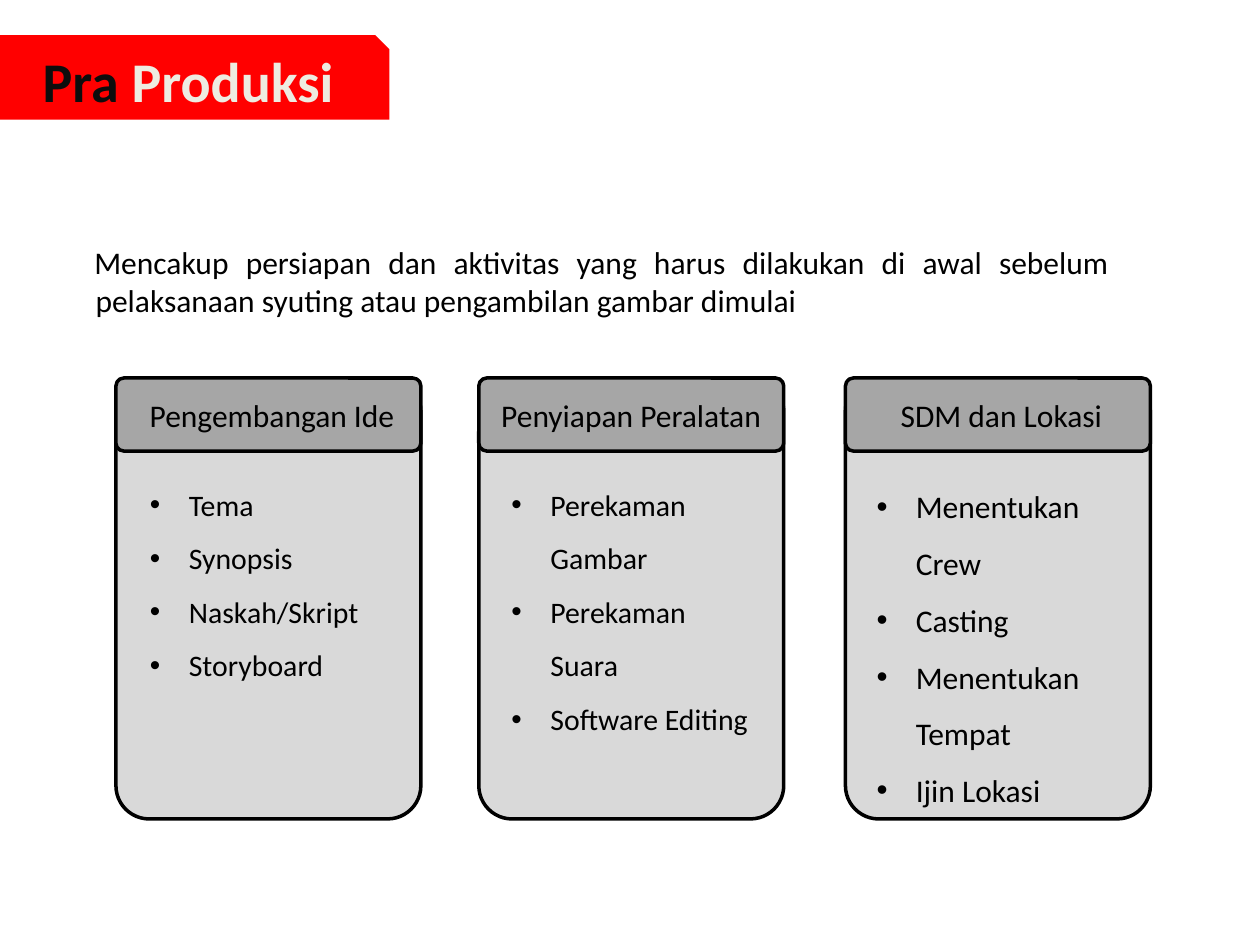
"""Build the "Pra Produksi" slide: a title flag, an introduction and three list cards."""
from lxml import etree
from pptx import Presentation, util as u
from pptx.dml.color import RGBColor
from pptx.enum import shapes, text
from pptx.oxml.ns import qn

COLORS = {"black": "000000", "ink": "0D0D0D", "cream": "EEECE1",
          "red": "FF0000", "card": "D9D9D9", "header": "A6A6A6"}
FONT = "Calibri"
TITLE = [("Pra ", "ink"), ("Produksi", "cream")]
INTRO = ("Mencakup persiapan dan aktivitas yang harus dilakukan di awal sebelum "
         "pelaksanaan syuting atau pengambilan gambar dimulai")
CARDS = [
    {"left": 0.92, "heading": "Pengembangan Ide", "heading_indent": 0.17,
     "list_indent": 0.17, "size": 17, "height": 2.12,
     "items": ["Tema", "Synopsis", "Naskah/Skript", "Storyboard"]},
    {"left": 3.8, "heading": "Penyiapan Peralatan", "heading_indent": 0.08,
     "list_indent": 0.16, "size": 17, "height": 2.98,
     "items": ["Perekaman Gambar", "Perekaman Suara", "Software Editing"]},
    {"left": 6.71, "heading": "SDM dan Lokasi", "heading_indent": 0.34,
     "list_indent": 0.15, "size": 18, "height": 3.13,
     "items": ["Menentukan Crew", "Casting", "Menentukan Tempat", "Ijin Lokasi"]},
]
CARD_TOP, CARD_WIDTH, CARD_HEIGHT, HEADER_HEIGHT = 3, 2.42, 3.5, 0.58
HEADING_WIDTH, LIST_WIDTH, LIST_TOP = 2.3, 2.08, 3.67
CORNER, BULLET_INDENT = 0.109, 0.31


def color(name):
    return RGBColor.from_string(COLORS[name])


def add_panel(page, kind, area, fill, outlined=False):
    panel = page.shapes.add_shape(kind, *map(u.Inches, area))
    panel.shadow.inherit = False
    panel.fill.solid()
    panel.fill.fore_color.rgb = color(fill)
    if outlined:
        panel.adjustments[0] = CORNER
        panel.line.color.rgb = color("black")
        panel.line.width = u.Pt(2)
    else:
        panel.line.fill.background()


def add_text(page, area, paragraphs, size, bold=False):
    box = page.shapes.add_textbox(*map(u.Inches, area))
    frame = box.text_frame
    frame.word_wrap = True
    for index, runs in enumerate(paragraphs):
        para = frame.paragraphs[0] if index == 0 else frame.add_paragraph()
        for words, tint in runs:
            span = para.add_run()
            span.text = words
            span.font.name = FONT
            span.font.size = u.Pt(size)
            span.font.bold = bold
            span.font.color.rgb = color(tint)
    return frame.paragraphs


def set_indent(para, left, first):
    props = para._p.get_or_add_pPr()
    props.set("marL", str(u.Inches(left)))
    props.set("indent", str(u.Inches(first)))
    return props


def add_bullet(para):
    para.line_spacing = 1.5
    props = set_indent(para, BULLET_INDENT, -BULLET_INDENT)
    etree.SubElement(props, qn("a:buFont")).set("typeface", "Arial")
    etree.SubElement(props, qn("a:buChar")).set("char", "•")


def add_card(page, card):
    left = card["left"]
    for height, fill in ((CARD_HEIGHT, "card"), (HEADER_HEIGHT, "header")):
        add_panel(page, shapes.MSO_SHAPE.ROUNDED_RECTANGLE,
                  (left, CARD_TOP, CARD_WIDTH, height), fill, outlined=True)
    add_text(page, (left + card["heading_indent"], CARD_TOP + 0.09, HEADING_WIDTH, 0.4),
             [[(card["heading"], "black")]], 18)
    items = add_text(page, (left + card["list_indent"], LIST_TOP, LIST_WIDTH, card["height"]),
                     [[(item, "black")] for item in card["items"]], card["size"])
    for para in items:
        add_bullet(para)


def main():
    deck = Presentation()
    deck.slide_width, deck.slide_height = u.Inches(10), u.Inches(7.5)
    page = deck.slides.add_slide(deck.slide_layouts[6])
    intro = add_text(page, (0.65, 1.88, 8.25, 1.15), [[(INTRO, "black")]], 18)[0]
    intro.alignment = text.PP_ALIGN.JUSTIFY
    set_indent(intro, 0.01, -0.01)
    for card in CARDS:
        add_card(page, card)
    add_panel(page, shapes.MSO_SHAPE.SNIP_1_RECTANGLE, (0, 0.28, 3.09, 0.67), "red")
    add_text(page, (0.24, 0.32, 3.08, 1), [TITLE], 32, bold=True)
    deck.save("out.pptx")


if __name__ == "__main__":
    main()
